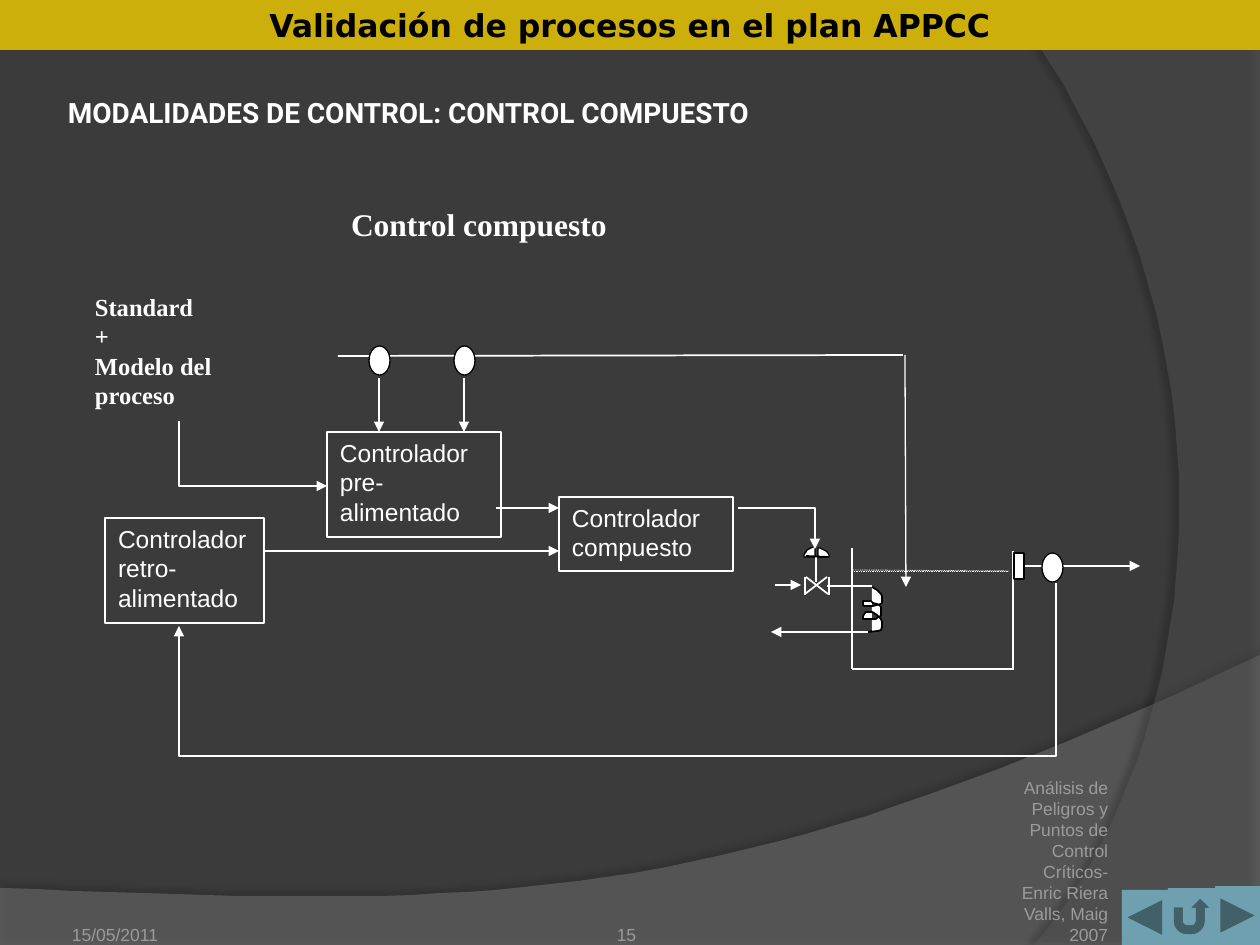
from dataclasses import dataclass

from lxml.etree import SubElement
from pptx import Presentation
from pptx.dml.color import RGBColor
from pptx.enum.dml import MSO_LINE
from pptx.enum.shapes import MSO_CONNECTOR, MSO_SHAPE
from pptx.enum.text import MSO_ANCHOR, PP_ALIGN
from pptx.oxml.ns import qn
from pptx.util import Pt

PX = 914400 / 126


@dataclass(frozen=True)
class Theme:
    background: str = "3B3B3B"
    banner: str = "CCAF0A"
    button: str = "6EA0B0"
    footer: str = "9D9B9A"
    white: str = "FFFFFF"
    black: str = "000000"
    sans: str = "Arial"
    serif: str = "Times New Roman"
    heading: str = "Roboto"
    banner_font: str = "DejaVu Sans"
    small: int = 10
    body: int = 14
    title: int = 16
    large: int = 18
    thin: float = 0.75
    thick: float = 1


THEME = Theme()

# Swooshes: corners, Bezier curve closing the outline, fill, opacity %, shadow
SWOOSHES = [
    ([(0, 888), (0, 945), (1260, 945)],
     [(1260, 655), (704, 919), (493, 906), (0, 888)], "7F7F7F", 45, (35, 4, 3.5, 270)),
    ([(1260, 3), (1260, 945)],
     [(1034, 945), (1178, 780), (1283, 378), (1008, 0)], "5E5E5E", 40, (45, 4, 4, 180)),
]
BANNER = "Validación de procesos en el plan APPCC"
BUTTONS = [
    (MSO_SHAPE.ACTION_BUTTON_BACK_OR_PREVIOUS, (1122, 890, 46, 55)),
    (MSO_SHAPE.ACTION_BUTTON_RETURN, (1168, 888, 47, 57)),
    (MSO_SHAPE.ACTION_BUTTON_FORWARD_OR_NEXT, (1215, 886, 45, 59)),
]
# Footers: text, box, alignment, insets (left, top, right, bottom)
FOOTERS = [
    ("15/05/2011", (59, 895, 294, 50), PP_ALIGN.LEFT, (13, 6, 13, 0)),
    ("Análisis de Peligros y Puntos de Control Críticos- Enric Riera Valls, Maig 2007",
     (1003, 895, 105, 50), PP_ALIGN.RIGHT, (0, 0, 0, 0)),
    ("15", (427, 895, 399, 50), PP_ALIGN.CENTER, (0, 6, 0, 0)),
]
TITLE = "MODALIDADES DE CONTROL: CONTROL COMPUESTO"
LABELS = [
    (["Control compuesto"], (351, 205, 358, 48), THEME.large),
    (["Standard", "+", "Modelo del proceso"], (95, 292, 179, 145), THEME.body),
]
CONTROLLERS = [
    ("Controlador retro-alimentado", (105, 518, 159, 105)),
    ("Controlador pre- alimentado", (327, 432, 174, 105)),
    ("Controlador compuesto", (559, 497, 174, 74)),
]
ARROWS = [
    (905, 355, 906, 587),   # feed into tank
    (775, 585, 801, 585),   # valve inlet
    (868, 632, 771, 632),   # coil outlet
    (464, 378, 464, 432),
    (379, 378, 379, 432),
    (1086, 566, 1140, 566),  # tank outlet
    (264, 551, 559, 551),
    (496, 508, 559, 508),
]
PIPES = [
    (903, 355, 338, 356),                                              # feed
    (805, 577, 805, 595), (806, 577, 828, 594), (805, 594, 827, 577),  # valve
    (829, 577, 829, 595), (816, 582, 816, 556), (827, 586, 872, 586),
    (852, 548, 852, 669), (852, 669, 1014, 669), (1013, 669, 1013, 551),  # tank
    (1024, 566, 1086, 566),                                            # outlet
]
LIQUID_LEVELS = [(853, 570, 1009, 571), (852, 571, 1009, 571)]
ROUTES = [
    [(738, 508), (815, 508), (815, 549)],
    [(179, 421), (179, 486), (327, 486)],
    [(1056, 583), (1056, 756), (179, 756), (179, 626)],
]
SENSORS = [(454, 346), (369, 346), (1042, 553)]
VALVE_CAPS = [
    [(815, 547), (809, 547), (804, 552), (804, 557)],
    [(818, 548), (824, 548), (829, 552), (829, 557)],
]
COIL = [
    (872, 587), (877, 590), (879, 592), (881, 594), (882, 596), (882, 603), (881, 604),
    (877, 605), (873, 606), (864, 606), (863, 605), (863, 601), (871, 601), (873, 603),
    (877, 604), (879, 605), (881, 607), (881, 616), (878, 617), (876, 619), (863, 619),
    (863, 616), (865, 613), (866, 612), (872, 612), (874, 613), (877, 615), (879, 617),
    (881, 619), (882, 622), (882, 627), (881, 630), (878, 631), (869, 632), (872, 631),
]


def emu(*lengths):
    return [round(length * PX) for length in lengths]


def rgb(color):
    return RGBColor.from_string(color)


def bezier(start, first, second, end, steps=40):
    """Points along a cubic curve."""
    def at(t, axis):
        u = 1 - t
        return (u**3 * start[axis] + 3 * u * u * t * first[axis]
                + 3 * u * t * t * second[axis] + t**3 * end[axis])
    return [(at(i / steps, 0), at(i / steps, 1)) for i in range(steps + 1)]


def style(shape, fill=None, line=None, width=THEME.thin):
    shape.shadow.inherit = False
    if fill:
        shape.fill.solid()
        shape.fill.fore_color.rgb = rgb(fill)
    else:
        shape.fill.background()
    if line:
        shape.line.color.rgb = rgb(line)
        shape.line.width = Pt(width)
    else:
        shape.line.fill.background()
    return shape


def add_preset(slide, kind, box, **look):
    return style(slide.shapes.add_shape(kind, *emu(*box)), **look)


def add_outline(slide, points, closed=False, **look):
    builder = slide.shapes.build_freeform(*points[0], scale=PX)
    builder.add_line_segments(points[1:], close=closed)
    return style(builder.convert_to_shape(), **look)


def add_arrowhead(shape):
    SubElement(shape.line._get_or_add_ln(), qn("a:tailEnd"), type="triangle")


def add_line(slide, ends, width, color=THEME.white):
    line = slide.shapes.add_connector(MSO_CONNECTOR.STRAIGHT, *emu(*ends))
    line.line.color.rgb = rgb(color)
    line.line.width = Pt(width)
    SubElement(line._element.spPr, qn("a:effectLst"))
    return line


def write(shape, texts, font, size, color=THEME.white, bold=False,
          align=PP_ALIGN.LEFT, anchor=MSO_ANCHOR.TOP, insets=(13, 6, 13, 6)):
    frame = shape.text_frame
    frame.word_wrap = True
    frame.vertical_anchor = anchor
    (frame.margin_left, frame.margin_top,
     frame.margin_right, frame.margin_bottom) = emu(*insets)
    for index, text in enumerate(texts):
        paragraph = frame.add_paragraph() if index else frame.paragraphs[0]
        paragraph.alignment = align
        run = paragraph.add_run()
        run.text = text
        run.font.name, run.font.size, run.font.bold = font, Pt(size), bold
        run.font.color.rgb = rgb(color)


def add_swoosh(slide, corners, curve, fill, opacity, shadow):
    shape = add_outline(slide, corners + bezier(*curve), closed=True, fill=fill)
    properties = shape._element.spPr
    color = properties.find(qn("a:solidFill"))[0]
    SubElement(color, qn("a:alpha"), val=str(opacity * 1000))
    strength, blur, distance, angle = shadow
    outer = SubElement(properties.find(qn("a:effectLst")), qn("a:outerShdw"),
                       blurRad=str(Pt(blur)), dist=str(Pt(distance)),
                       dir=str(angle * 60000), algn="ctr", rotWithShape="0")
    shade = SubElement(outer, qn("a:srgbClr"), val=THEME.black)
    SubElement(shade, qn("a:alpha"), val=str(strength * 1000))


def add_frame(slide):
    for swoosh in SWOOSHES:
        add_swoosh(slide, *swoosh)
    banner = add_preset(slide, MSO_SHAPE.RECTANGLE, (0, 0, 1260, 50), fill=THEME.banner)
    write(banner, [BANNER], THEME.banner_font, THEME.large, THEME.black, True, PP_ALIGN.CENTER)
    for kind, box in BUTTONS:
        add_preset(slide, kind, box, fill=THEME.button)
    for text, box, align, insets in FOOTERS:
        write(slide.shapes.add_textbox(*emu(*box)), [text], THEME.sans, THEME.small,
              THEME.footer, align=align, anchor=MSO_ANCHOR.BOTTOM, insets=insets)
    write(slide.shapes.add_textbox(*emu(62, 76, 1124, 72)), [TITLE], THEME.heading,
          THEME.title, bold=True, anchor=MSO_ANCHOR.MIDDLE, insets=(6, 6, 6, 6))


def add_diagram(slide):
    solid = {"fill": THEME.white, "line": THEME.black}
    for curve in VALVE_CAPS:
        corner = (curve[0][0], curve[-1][1])
        add_outline(slide, bezier(*curve, steps=8) + [corner], closed=True, **solid)
    for ends in ARROWS:
        add_arrowhead(add_line(slide, ends, THEME.thin))
    for ends in PIPES:
        add_line(slide, ends, THEME.thick)
    for ends in LIQUID_LEVELS:
        add_line(slide, ends, 0.5).line.dash_style = MSO_LINE.ROUND_DOT
    add_line(slide, (806, 556, 828, 557), THEME.thick, THEME.black)
    add_outline(slide, COIL, width=THEME.thick, **solid)
    for points in ROUTES:
        add_arrowhead(add_outline(slide, points, line=THEME.white))
    add_preset(slide, MSO_SHAPE.RECTANGLE, (1014, 553, 10, 26), **solid)
    for left, top in SENSORS:
        add_preset(slide, MSO_SHAPE.OVAL, (left, top, 21, 29), **solid)
    for texts, box, size in LABELS:
        write(slide.shapes.add_textbox(*emu(*box)), texts, THEME.serif, size,
              bold=True, insets=(0, 0, 0, 0))
    for text, box in CONTROLLERS:
        controller = add_preset(slide, MSO_SHAPE.RECTANGLE, box, line=THEME.white)
        write(controller, [text], THEME.sans, THEME.body)


def main():
    presentation = Presentation()
    presentation.slide_width, presentation.slide_height = emu(1260, 945)
    slide = presentation.slides.add_slide(presentation.slide_layouts[6])
    slide.background.fill.solid()
    slide.background.fill.fore_color.rgb = rgb(THEME.background)
    add_frame(slide)
    add_diagram(slide)
    presentation.save("out.pptx")


if __name__ == "__main__":
    main()
